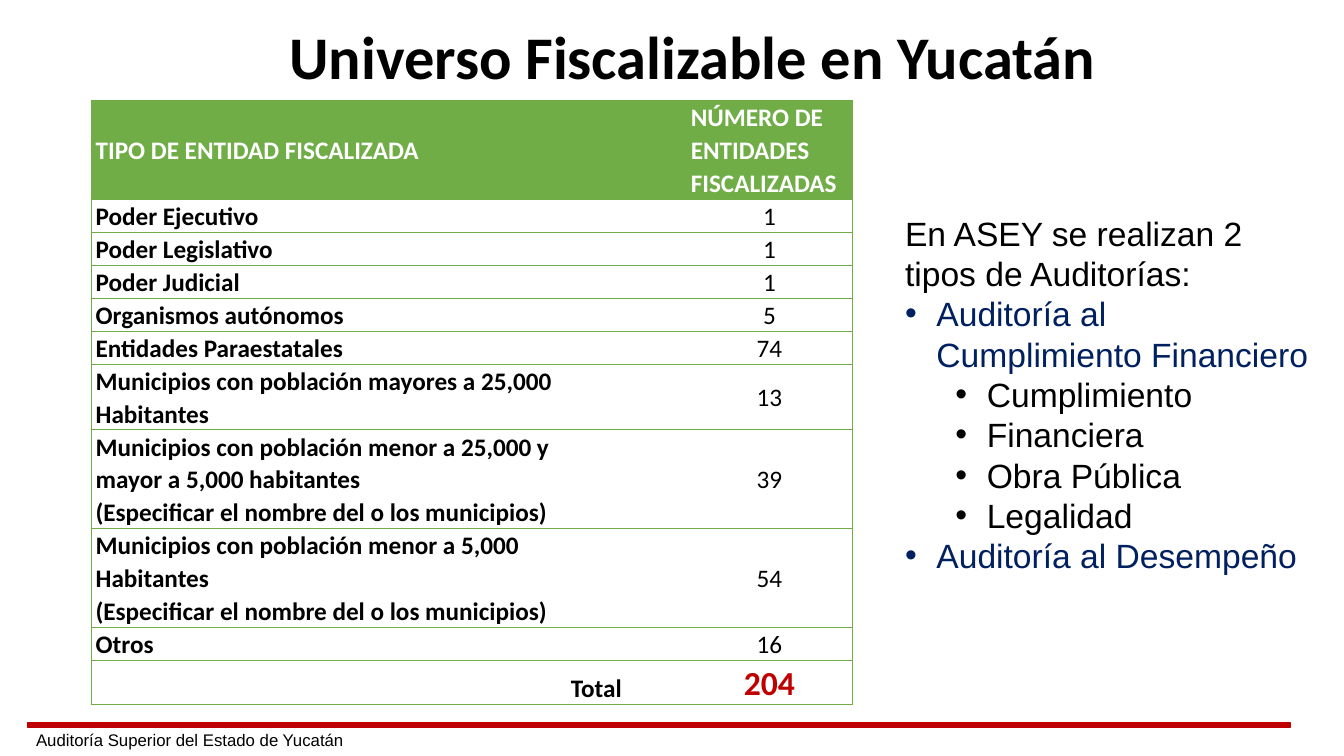
"""Build the slide on auditable entities in Yucatán."""
from lxml.etree import SubElement
from pptx import Presentation
from pptx.dml.color import RGBColor
from pptx.enum.shapes import MSO_SHAPE
from pptx.enum.text import MSO_ANCHOR, MSO_AUTO_SIZE, PP_ALIGN
from pptx.oxml.ns import qn
from pptx.util import Cm, Pt

BLACK = RGBColor(0, 0, 0)
WHITE = RGBColor(255, 255, 255)
GREEN = RGBColor(0x70, 0xAD, 0x47)
RED = RGBColor(0xC0, 0, 0)
NAVY = RGBColor(0, 0x20, 0x60)


def write(frame, text, size=18, font="Calibri", color=BLACK, bold=False,
          align=PP_ALIGN.LEFT, space=None, left=0, bullet=False, level=0):
    para = frame.paragraphs[0]
    if para.runs:
        para = frame.add_paragraph()
    para.alignment, para.line_spacing, para.level = align, space, level
    run = para.add_run()
    run.text = text
    run.font.size, run.font.name, run.font.bold = Pt(size), font, bold
    run.font.color.rgb = color
    props = para._p.get_or_add_pPr()
    props.set("marL", str(Cm(left)))
    props.set("indent", str(Cm(-0.79 if bullet else 0)))
    if bullet:
        SubElement(props, qn("a:buFont"), typeface="Arial")
        SubElement(props, qn("a:buChar"), char="•")


def border(cell, sides):
    props = cell._tc.get_or_add_tcPr()
    for side in "LRTB":
        line = SubElement(props, qn("a:ln" + side), w=str(Pt(0.5)))
        if side in sides:
            fill = SubElement(line, qn("a:solidFill"))
            SubElement(fill, qn("a:srgbClr"), val=str(GREEN))
        else:
            SubElement(line, qn("a:noFill"))


deck = Presentation()
deck.slide_width, deck.slide_height = Cm(33.87), Cm(19.05)
slide = deck.slides.add_slide(deck.slide_layouts[5])
shapes = slide.shapes

title = shapes.title
title.left, title.top, title.width, title.height = Cm(6.38), Cm(0.61), Cm(22.15), Cm(1.78)
title.text_frame.vertical_anchor = MSO_ANCHOR.MIDDLE
title.text_frame.auto_size = MSO_AUTO_SIZE.NONE
write(title.text_frame, "Universo Fiscalizable en Yucatán", size=43.2,
      bold=True, align=PP_ALIGN.CENTER, space=0.9)

NOTE = "(Especificar el nombre del o los municipios)"
rows = [
    (["TIPO DE ENTIDAD FISCALIZADA"], "NÚMERO DE ENTIDADES FISCALIZADAS", 2.49),
    (["Poder Ejecutivo"], "1", 0.83),
    (["Poder Legislativo"], "1", 0.83),
    (["Poder Judicial"], "1", 0.83),
    (["Organismos autónomos"], "5", 0.83),
    (["Entidades Paraestatales"], "74", 0.83),
    (["Municipios con población mayores a 25,000 Habitantes"], "13", 1.66),
    (["Municipios con población menor a 25,000 y mayor a 5,000 habitantes", NOTE], "39", 2.49),
    (["Municipios con población menor a 5,000 Habitantes", NOTE], "54", 2.49),
    (["Otros"], "16", 0.83),
    (["Total"], "204", 1.1),
]
high = sum(row[2] for row in rows)
table = shapes.add_table(len(rows), 2, Cm(2.29), Cm(2.53), Cm(19.2), Cm(high)).table
table.first_row = table.horz_banding = False
table.columns[0].width, table.columns[1].width = Cm(13.5), Cm(5.7)

for i, (names, count, tall) in enumerate(rows):
    table.rows[i].height = Cm(tall)
    head, last = i == 0, i == len(rows) - 1
    name, value = table.cell(i, 0), table.cell(i, 1)
    for cell, sides in ((name, "LTB"), (value, "RTB")):
        border(cell, sides)
        cell.margin_left = cell.margin_right = Cm(0.12)
        cell.margin_top = cell.margin_bottom = 0
        cell.vertical_anchor = MSO_ANCHOR.MIDDLE
        if head:
            cell.fill.solid()
            cell.fill.fore_color.rgb = GREEN
        else:
            cell.fill.background()
    if not head:
        name.vertical_anchor = MSO_ANCHOR.BOTTOM
    for text in names:
        write(name.text_frame, text, color=WHITE if head else BLACK, bold=True,
              align=PP_ALIGN.RIGHT if last else PP_ALIGN.LEFT, space=1.07)
    write(value.text_frame, count, size=24 if last else 18, bold=head or last,
          color=WHITE if head else RED if last else BLACK,
          align=PP_ALIGN.LEFT if head else PP_ALIGN.CENTER, space=1.07, left=1.5)

audits = shapes.add_textbox(Cm(22.56), Cm(5.23), Cm(10.74), Cm(9.5)).text_frame
audits.word_wrap = True
write(audits, "En ASEY se realizan 2 tipos de Auditorías:", size=24, font="Arial")
for text, level in (
    ("Auditoría al Cumplimiento Financiero", 0),
    ("Cumplimiento", 1),
    ("Financiera", 1),
    ("Obra Pública", 1),
    ("Legalidad", 1),
    ("Auditoría al Desempeño", 0),
):
    write(audits, text, size=24, font="Arial", color=BLACK if level else NAVY,
          left=0.79 + 1.27 * level, bullet=True, level=level)

bar = shapes.add_shape(MSO_SHAPE.RECTANGLE, Cm(0.71), Cm(18.2), Cm(31.8), Cm(0.13))
bar.shadow.inherit = False
bar.fill.solid()
bar.fill.fore_color.rgb = bar.line.color.rgb = RED
bar.line.width = Pt(1)

foot = shapes.add_textbox(Cm(0.66), Cm(18.26), Cm(8.33), Cm(0.76)).text_frame
foot.word_wrap = False
write(foot, "Auditoría Superior del Estado de Yucatán", size=12, font="Arial")

deck.save("out.pptx")
